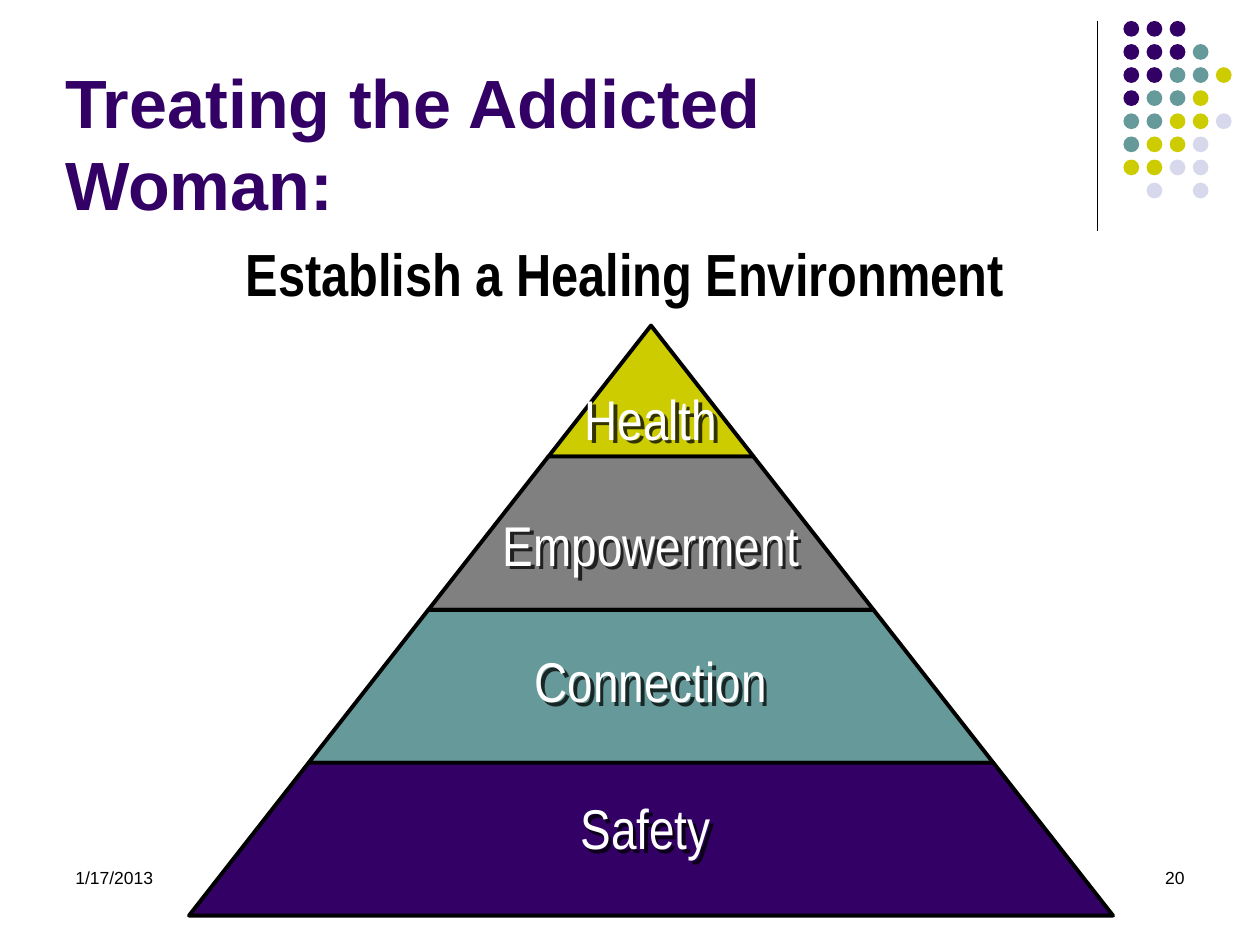
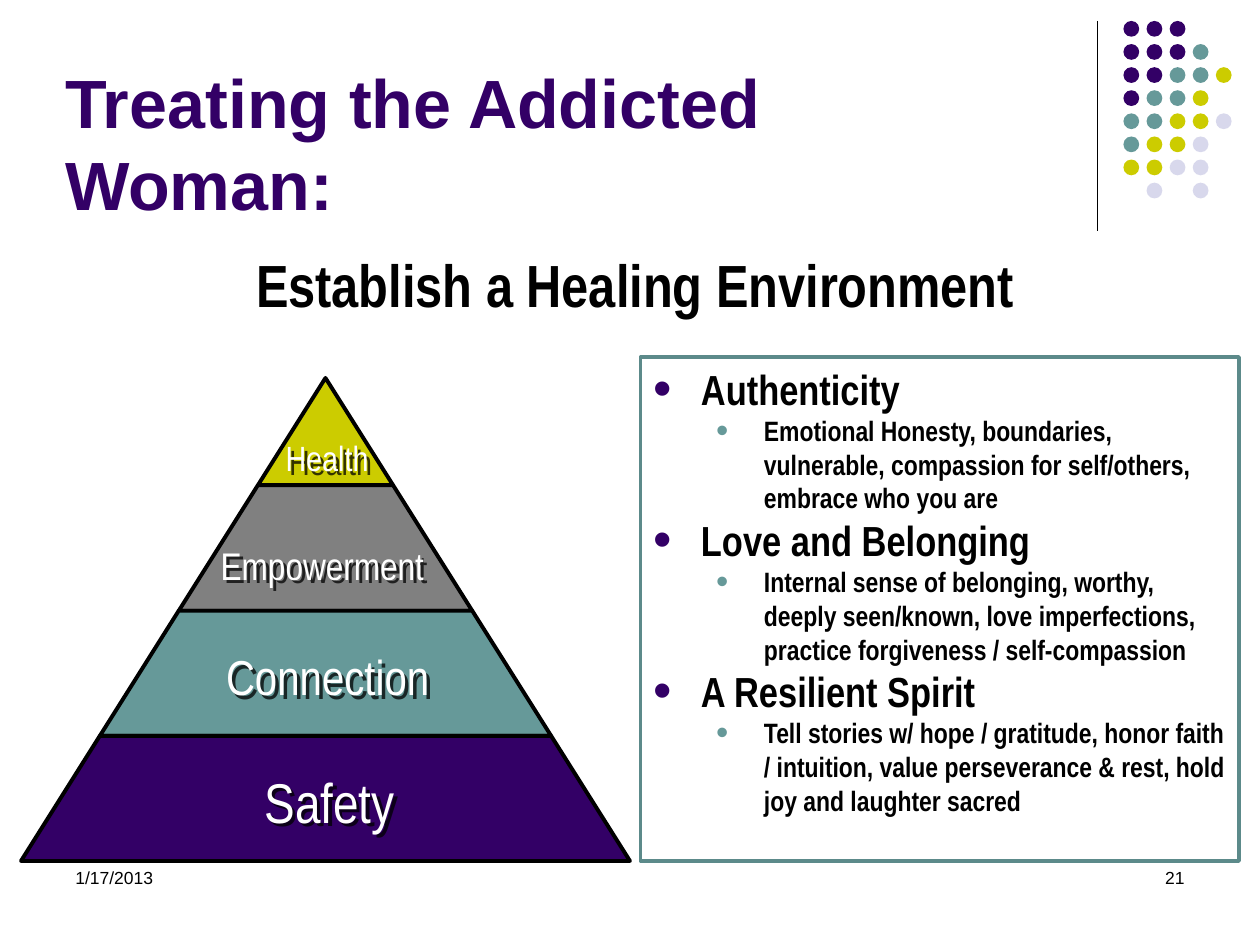
from lxml import etree
from pptx import Presentation
from pptx.dml.color import RGBColor
from pptx.enum.shapes import MSO_CONNECTOR, MSO_SHAPE
from pptx.enum.text import MSO_ANCHOR, MSO_AUTO_SIZE, PP_ALIGN
from pptx.oxml.ns import qn
from pptx.util import Inches, Pt

LEFT, CENTER, RIGHT = PP_ALIGN.LEFT, PP_ALIGN.CENTER, PP_ALIGN.RIGHT
TOP, MIDDLE = MSO_ANCHOR.TOP, MSO_ANCHOR.MIDDLE
NO_FIT = MSO_AUTO_SIZE.NONE
OVAL, STRAIGHT = MSO_SHAPE.OVAL, MSO_CONNECTOR.STRAIGHT

# Palette and fonts
PURPLE, TEAL, OLIVE, PALE = "330066", "669999", "CCCC00", "D8D8EC"
GRAY, BLACK, WHITE, PANEL_EDGE = "808080", "000000", "FFFFFF", "5C8A8A"
SANS, NARROW = "Arial", "Arial Narrow"

# Slide size and grid: 120 columns by 90 rows of square cells
prs = Presentation()
prs.slide_width, prs.slide_height = Inches(10), Inches(7.5)
CELL = prs.slide_width / 120

# Shared decoration: one letter per dot, a point where there is none
DOT_ROWS = ["PPP", "PPPT", "PPTTO", "PTTO", "TTOOL", "TOOL", "OOLL", ".L.L"]
DOT_COLORS = {"P": PURPLE, "T": TEAL, "O": OLIVE, "L": PALE}
DOT_LEFT, DOT_TOP, DOT_PITCH, DOT_SIZE = 107, 2, 2.2, 1.5

# Pyramid tiers from the top, with edges as shares of the height
TIERS = [("Health", OLIVE), ("Empowerment", GRAY),
         ("Connection", TEAL), ("Safety", PURPLE)]
TIER_EDGES = [0, 0.222, 0.482, 0.741, 1]

TRAITS = [
    ("Authenticity",
     "Emotional Honesty, boundaries, vulnerable, compassion for self/others, "
     "embrace who you are"),
    ("Love and Belonging",
     "Internal sense of belonging, worthy, deeply seen/known, love "
     "imperfections, practice forgiveness / self-compassion"),
    ("A Resilient Spirit",
     "Tell stories w/ hope / gratitude, honor faith / intuition, value "
     "perseverance & rest, hold joy and laughter sacred"),
]
# Level formats: text size, left margin in inches, bullet colour
LEVELS = [(24, 0.38, PURPLE), (16, 0.88, TEAL)]

# Per slide; label = left, top, width in cells and text size
SLIDES = [
    {"layout": 1, "number": "20", "subtitle": (7, 22, 105, 10),
     "apex": (62, 31), "base": 87.2, "half": 44,
     "labels": [(54, 36, 16, 32), (46, 48, 32, 32),
                (47, 61, 30, 32), (47, 75, 29, 32)]},
    {"layout": 3, "number": "21", "subtitle": (8, 23, 105, 11.6),
     "apex": (31, 36), "base": 82, "half": 29,
     "labels": [(25.2, 41, 11.9, 20), (18.8, 51, 23.8, 22),
                (18, 61, 26.4, 28), (20.6, 72.5, 21.6, 32)]},
]


def color(hex_code):
    return RGBColor.from_string(hex_code)


def write(sp, box, lines, align=LEFT, anchor=TOP, font=NARROW, ink=BLACK, bold=False):
    """Place a shape on the grid and fill it with (text, size) paragraphs."""
    for side, cells in zip(("left", "top", "width", "height"), box):
        setattr(sp, side, round(cells * CELL))
    tf = sp.text_frame
    frame_format = {"word_wrap": True, "auto_size": NO_FIT, "vertical_anchor": anchor}
    for name, value in frame_format.items():
        setattr(tf, name, value)
    for i, (text, size) in enumerate(lines):
        p = tf.add_paragraph() if i else tf.paragraphs[0]
        p.alignment = align
        r = p.add_run()
        r.text = text
        for name, value in {"name": font, "size": Pt(size), "bold": bold}.items():
            setattr(r.font, name, value)
        r.font.color.rgb = color(ink)
    return tf


for page in SLIDES:
    s = prs.slides.add_slide(prs.slide_layouts[page["layout"]])

    # Rule and dots in the corner
    rule = s.shapes.add_connector(
        STRAIGHT, *(round(v * CELL) for v in (104.5, 2, 104.5, 22)))
    rule.line.color.rgb = color(BLACK)
    rule.line.width = Pt(0.75)
    etree.SubElement(rule._element.spPr, qn("a:effectLst"))
    for row, dots in enumerate(DOT_ROWS):
        for col, letter in enumerate(dots):
            if letter in DOT_COLORS:
                x, y = DOT_LEFT + col * DOT_PITCH, DOT_TOP + row * DOT_PITCH
                dot = s.shapes.add_shape(
                    OVAL, *(round(v * CELL) for v in (x, y, DOT_SIZE, DOT_SIZE)))
                dot.shadow.inherit = False
                dot.fill.solid()
                dot.fill.fore_color.rgb = color(DOT_COLORS[letter])
                dot.line.fill.background()

    # Date and slide number
    for left, text, align in ((6, "1/17/2013", LEFT), (86, page["number"], RIGHT)):
        write(s.shapes.add_textbox(0, 0, 0, 0), (left, 82, 28, 6), [(text, 10)],
              align, font=SANS)

    # Title and subtitle
    write(s.shapes.title, (5, 7, 79, 13), [("Treating the Addicted Woman:", 39)],
          anchor=MIDDLE, font=SANS, ink=PURPLE, bold=True)
    tf = write(s.placeholders[1], page["subtitle"],
               [("Establish a Healing Environment", 34)], CENTER, bold=True)
    etree.SubElement(tf.paragraphs[0]._p.get_or_add_pPr(), qn("a:buNone"))

    # Pyramid tiers, sliced from one triangle
    apex_x, apex_y = page["apex"]
    height = page["base"] - apex_y
    for (name, tint), upper, lower in zip(TIERS, TIER_EDGES, TIER_EDGES[1:]):
        corners = [(apex_x + side * share * page["half"], apex_y + share * height)
                   for side, share in ((-1, upper), (1, upper), (1, lower), (-1, lower))]
        points = [(round(x * CELL), round(y * CELL)) for x, y in dict.fromkeys(corners)]
        outline = s.shapes.build_freeform(*points[0])
        outline.add_line_segments(points[1:], close=True)
        tier = outline.convert_to_shape()
        tier.shadow.inherit = False
        tier.fill.solid()
        tier.fill.fore_color.rgb = color(tint)
        tier.line.color.rgb = color(BLACK)
        tier.line.width = Pt(2.25)

    # Tier labels with a soft drop shadow
    for (name, tint), (left, top, width, size) in zip(TIERS, page["labels"]):
        label = s.shapes.add_textbox(0, 0, 0, 0)
        write(label, (left, top, width, 1.2 + 0.2 * size), [(name, size)],
              CENTER, ink=WHITE)
        effects = etree.SubElement(label._element.spPr, qn("a:effectLst"))
        shadow = etree.SubElement(effects, qn("a:outerShdw"),
                                  dist="36000", dir="2700000", algn="ctr")
        shade = etree.SubElement(shadow, qn("a:srgbClr"), val=BLACK)
        etree.SubElement(shade, qn("a:alpha"), val="75000")

# Panel of traits on the last slide
panel = s.placeholders[2]
lines = [(text, LEVELS[level][0]) for trait in TRAITS for level, text in enumerate(trait)]
tf = write(panel, (61, 34, 57, 48), lines, bold=True)
panel.fill.solid()
panel.fill.fore_color.rgb = color(WHITE)
panel.line.color.rgb = color(PANEL_EDGE)
panel.line.width = Pt(2)
for i, p in enumerate(tf.paragraphs):
    p.level = i % 2
    p.space_before = Pt(0)
    size, margin, bullet_color = LEVELS[p.level]
    pPr = p._p.get_or_add_pPr()
    pPr.set("marL", str(Inches(margin)))
    pPr.set("indent", str(Inches(-0.38)))
    bullet = etree.SubElement(pPr, qn("a:buClr"))
    etree.SubElement(bullet, qn("a:srgbClr"), val=bullet_color)
    etree.SubElement(pPr, qn("a:buSzPct"), val="125000")
    etree.SubElement(pPr, qn("a:buFont"), typeface=SANS)
    etree.SubElement(pPr, qn("a:buChar"), char="•")

prs.save("out.pptx")
